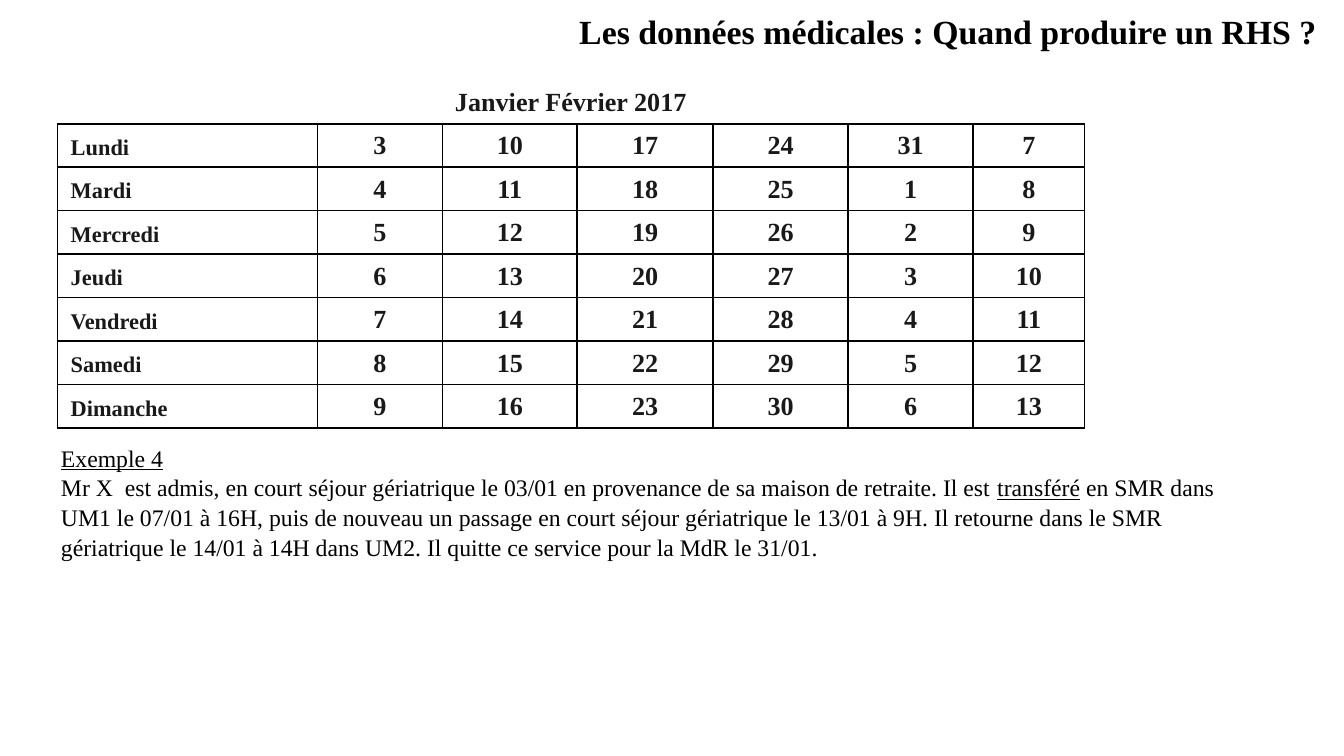
from lxml import etree
from pptx import Presentation
from pptx.enum import text
from pptx.oxml import ns
from pptx.util import Pt

COLOURS = {"black": "000000", "ink": "191919"}
DAYS = ["Lundi", "Mardi", "Mercredi", "Jeudi", "Vendredi", "Samedi", "Dimanche"]
COLUMN_WIDTHS = [139.3, 67, 72.3, 72.7, 72.5, 67, 59.6]
ROW_HEIGHT = 23.3
HANGING = 27.36
FIRST_DAY, DAYS_IN_JANUARY = 3, 31

EXAMPLE = [
    [("Exemple 4", True)],
    [("Mr X  est admis, en court séjour gériatrique le 03/01 en provenance de sa "
      "maison de retraite. Il est ", False),
     ("transféré", True),
     (" en SMR dans UM1 le 07/01 à 16H, puis de nouveau un passage en court séjour "
      "gériatrique le 13/01 à 9H. Il retourne dans le SMR gériatrique le 14/01 à 14H "
      "dans UM2. Il quitte ce service pour la MdR le 31/01.", False)],
]


class SlideWriter:
    font_name = "Times New Roman"

    def __init__(self, page):
        self.page = page

    def style(self, span, size, colour, bold=False, underline=False):
        font = span.font
        font.name, font.size = self.font_name, Pt(size)
        font.bold, font.underline = bold, underline
        font.color.rgb = self.rgb(colour)

    @staticmethod
    def rgb(colour):
        from pptx.dml.color import RGBColor
        return RGBColor.from_string(COLOURS[colour])

    def title(self, words, left, top, width, height):
        box = self.page.shapes.title
        box.left, box.top, box.width, box.height = map(Pt, (left, top, width, height))
        frame = box.text_frame
        frame.text = words
        frame.auto_size = text.MSO_AUTO_SIZE.NONE
        frame.vertical_anchor = text.MSO_ANCHOR.MIDDLE
        para = frame.paragraphs[0]
        para.alignment = text.PP_ALIGN.LEFT
        self.style(para.runs[0], 18.1, "black", bold=True)

    def paragraphs(self, content, left, top, width, height):
        box = self.page.shapes.add_textbox(*map(Pt, (left, top, width, height)))
        frame = box.text_frame
        frame.word_wrap = True
        for index, pieces in enumerate(content):
            para = frame.add_paragraph() if index else frame.paragraphs[0]
            para.line_spacing = 1.05
            for words, underline in pieces:
                span = para.add_run()
                span.text = words
                self.style(span, 12.7, "black", underline=underline)

    def borders(self, cell, sides):
        properties = cell._tc.get_or_add_tcPr()
        for side in "LRTB":
            line = etree.SubElement(properties, ns.qn(f"a:ln{side}"), w=str(Pt(1)))
            if side in sides:
                fill = etree.SubElement(line, ns.qn("a:solidFill"))
                etree.SubElement(fill, ns.qn("a:srgbClr"), val=COLOURS["black"])
            else:
                etree.SubElement(line, ns.qn("a:noFill"))

    def cell(self, cell, words, size=14, centred=True, sides="LRTB"):
        self.borders(cell, sides)
        cell.fill.background()
        cell.vertical_anchor = text.MSO_ANCHOR.BOTTOM
        para = cell.text_frame.paragraphs[0]
        para.text = words
        para.alignment = text.PP_ALIGN.CENTER if centred else text.PP_ALIGN.LEFT
        indents = para._p.get_or_add_pPr()
        indents.set("marL", str(Pt(HANGING)))
        indents.set("indent", str(-Pt(HANGING)))
        for span in para.runs:
            self.style(span, size, "ink", bold=True)

    def calendar(self, heading, left, top):
        rows, columns = len(DAYS) + 1, len(COLUMN_WIDTHS)
        table = self.page.shapes.add_table(
            rows, columns, Pt(left), Pt(top),
            Pt(sum(COLUMN_WIDTHS)), Pt(rows * ROW_HEIGHT)).table
        table.first_row = table.horz_banding = False
        for column, width in zip(table.columns, COLUMN_WIDTHS):
            column.width = Pt(width)
        for row in table.rows:
            row.height = Pt(ROW_HEIGHT)

        # Heading across all weeks
        for column in range(columns):
            self.cell(table.cell(0, column), "" if column else heading, sides="B")
        table.cell(0, 0).merge(table.cell(0, columns - 1))

        # One row per weekday, one column per week
        for row, day in enumerate(DAYS):
            self.cell(table.cell(row + 1, 0), day, size=12, centred=False)
            for week in range(columns - 1):
                date = (FIRST_DAY - 1 + 7 * week + row) % DAYS_IN_JANUARY + 1
                self.cell(table.cell(row + 1, week + 1), str(date))


def main():
    deck = Presentation()
    deck.slide_width, deck.slide_height = Pt(720), Pt(405)
    writer = SlideWriter(deck.slides.add_slide(deck.slide_layouts[5]))

    writer.title("Les données médicales : Quand produire un RHS ?", 303.1, 1.8, 414, 29.5)
    writer.calendar("Janvier Février 2017", 30.7, 43)
    writer.paragraphs(EXAMPLE, 25.6, 233.3, 635.8, 69.1)

    deck.save("out.pptx")


if __name__ == "__main__":
    main()
